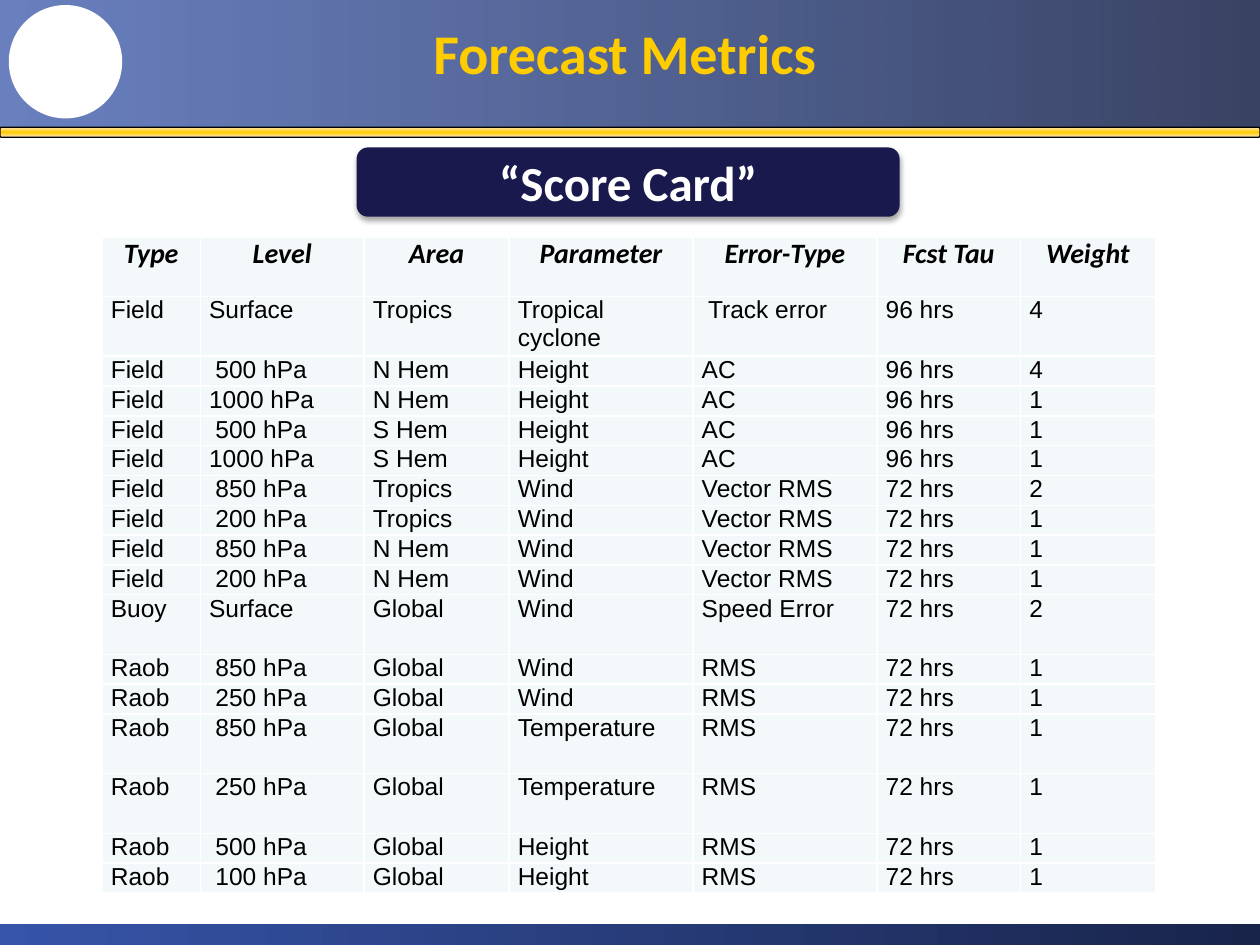
from lxml import etree
from pptx import Presentation, oxml, util as u
from pptx.dml.color import RGBColor
from pptx.enum import shapes, text
from pptx.oxml.ns import qn

HEADERS = ["Type", "Level", "Area", "Parameter", "Error-Type", "Fcst Tau", "Weight"]
SCORES = [
    ("Field", "Surface", "Tropics", "Tropical cyclone", "Track error", "96 hrs", "4"),
    ("Field", "500 hPa", "N Hem", "Height", "AC", "96 hrs", "4"),
    ("Field", "1000 hPa", "N Hem", "Height", "AC", "96 hrs", "1"),
    ("Field", "500 hPa", "S Hem", "Height", "AC", "96 hrs", "1"),
    ("Field", "1000 hPa", "S Hem", "Height", "AC", "96 hrs", "1"),
    ("Field", "850 hPa", "Tropics", "Wind", "Vector RMS", "72 hrs", "2"),
    ("Field", "200 hPa", "Tropics", "Wind", "Vector RMS", "72 hrs", "1"),
    ("Field", "850 hPa", "N Hem", "Wind", "Vector RMS", "72 hrs", "1"),
    ("Field", "200 hPa", "N Hem", "Wind", "Vector RMS", "72 hrs", "1"),
    ("Buoy", "Surface", "Global", "Wind", "Speed Error", "72 hrs", "2"),
    ("Raob", "850 hPa", "Global", "Wind", "RMS", "72 hrs", "1"),
    ("Raob", "250 hPa", "Global", "Wind", "RMS", "72 hrs", "1"),
    ("Raob", "850 hPa", "Global", "Temperature", "RMS", "72 hrs", "1"),
    ("Raob", "250 hPa", "Global", "Temperature", "RMS", "72 hrs", "1"),
    ("Raob", "500 hPa", "Global", "Height", "RMS", "72 hrs", "1"),
    ("Raob", "100 hPa", "Global", "Height", "RMS", "72 hrs", "1"),
]
COLUMN_WIDTHS = [0.78, 1.3, 1.15, 1.46, 1.46, 1.14, 1.07]
DOUBLE_ROWS = {0, 1, 10, 13, 14}
TABLE_BOX = (0.81, 1.88, 8.36, 5.21)
INSET, INDENT = 0.07, 0.05

BLUE, NAVY, GOLD, CREAM = "3654A8", "18244A", "FFCC00", "FFE5B6"
BANDS = [
    ((0, 0, 10, 1.08), "RECTANGLE", [(0, BLUE, 74), (100, NAVY, 86)], 0, None),
    ((0, 1.01, 10, 0.08), "ROUNDED_RECTANGLE",
     [(0, CREAM, 100), (50, GOLD, 100), (100, CREAM, 100)], 90, "000000"),
    ((0, 7.33, 10, 0.17), "RECTANGLE", [(0, BLUE, 100), (100, NAVY, 100)], 0, None),
]


def color(value):
    return RGBColor.from_string(value)


def inches(box):
    return [u.Inches(length) for length in box]


def add_xml(parent, markup):
    namespace = oxml.ns.nsdecls("a")
    tag, rest = markup[:markup.index(" ")], markup[markup.index(" "):]
    parent.append(oxml.parse_xml(f"{tag} {namespace}{rest}"))


def add_shape(slide, kind, box, fill=None, line=None):
    shape = slide.shapes.add_shape(getattr(shapes.MSO_SHAPE, kind), *inches(box))
    shape.shadow.inherit = False
    if fill:
        shape.fill.solid()
        shape.fill.fore_color.rgb = color(fill)
    if line:
        shape.line.color.rgb = color(line)
        shape.line.width = u.Pt(0.75)
    else:
        shape.line.fill.background()
    return shape


def set_gradient(shape, stops, angle):
    shape.fill.gradient()
    shape.fill.gradient_angle = angle
    stop_list = next(shape.element.spPr.iter(qn("a:gsLst")))
    for stop in list(stop_list):
        stop_list.remove(stop)
    for position, value, opacity in stops:
        add_xml(stop_list, f'<a:gs pos="{position * 1000}"><a:srgbClr val="{value}">'
                           f'<a:alpha val="{opacity * 1000}"/></a:srgbClr></a:gs>')


def write(frame, words, size, font, value, bold=True, italic=False, centered=True):
    frame.text = words
    frame.word_wrap = True
    paragraph = frame.paragraphs[0]
    paragraph.alignment = text.PP_ALIGN.CENTER if centered else text.PP_ALIGN.LEFT
    style = paragraph.runs[0].font
    style.size, style.name, style.bold, style.italic = u.Pt(size), font, bold, italic
    style.color.rgb = color(value)


def fill_cell(cell, words, header):
    indented = words == "Track error" or (words.endswith("hPa") and len(words) == 7)
    cell.margin_left = u.Inches(INSET + INDENT * indented)
    cell.margin_right = u.Inches(INSET)
    cell.margin_top = cell.margin_bottom = 0
    if header:
        write(cell.text_frame, words, 16, "Calibri", "000000", italic=True)
    else:
        write(cell.text_frame, words, 14, "Arial", "000000", bold=False, centered=False)
    properties = cell._tc.get_or_add_tcPr()
    for side in "LRTB":
        add_xml(properties, f'<a:ln{side} w="12700"><a:solidFill><a:srgbClr val="FFFFFF"/>'
                            f'</a:solidFill></a:ln{side}>')
    cell.fill.solid()
    cell.fill.fore_color.rgb = color("F3F9FA")


def add_score_table(slide):
    rows = [HEADERS, *SCORES]
    table = slide.shapes.add_table(len(rows), len(HEADERS), *inches(TABLE_BOX)).table
    table.first_row = table.horz_banding = False
    for column, width in zip(table.columns, COLUMN_WIDTHS):
        column.width = u.Inches(width)
    row_height = TABLE_BOX[3] / (len(rows) + len(DOUBLE_ROWS))
    for index, words in enumerate(rows):
        table.rows[index].height = u.Inches(row_height * (2 if index in DOUBLE_ROWS else 1))
        for cell, word in zip(table.rows[index].cells, words):
            fill_cell(cell, word, index == 0)


def main():
    presentation = Presentation()
    presentation.slide_width, presentation.slide_height = inches((10, 7.5))
    slide = presentation.slides.add_slide(presentation.slide_layouts[6])

    for box, kind, stops, angle, line in BANDS:
        set_gradient(add_shape(slide, kind, box, line=line), stops, angle)

    title = slide.shapes.add_textbox(*inches((0.75, 0.08, 8.42, 0.67)))
    title.text_frame.vertical_anchor = text.MSO_ANCHOR.MIDDLE
    write(title.text_frame, "Forecast Metrics", 32, "Calibri", GOLD)

    add_shape(slide, "OVAL", (0.07, 0.04, 0.9, 0.9), "FFFFFF")
    add_score_table(slide)

    card = add_shape(slide, "ROUNDED_RECTANGLE", (2.83, 1.17, 4.31, 0.55), "19194D")
    card.text_frame.vertical_anchor = text.MSO_ANCHOR.MIDDLE
    write(card.text_frame, "“Score Card”", 28, "Calibri", "FFFFFF")
    effects = card.element.spPr.find(qn("a:effectLst"))
    add_xml(effects, f'<a:outerShdw blurRad="{u.Pt(3.1)}" dist="{u.Pt(1.8)}" dir="5400000" '
                     'rotWithShape="0"><a:srgbClr val="000000"><a:alpha val="35000"/>'
                     '</a:srgbClr></a:outerShdw>')

    presentation.save("out.pptx")


if __name__ == "__main__":
    main()
